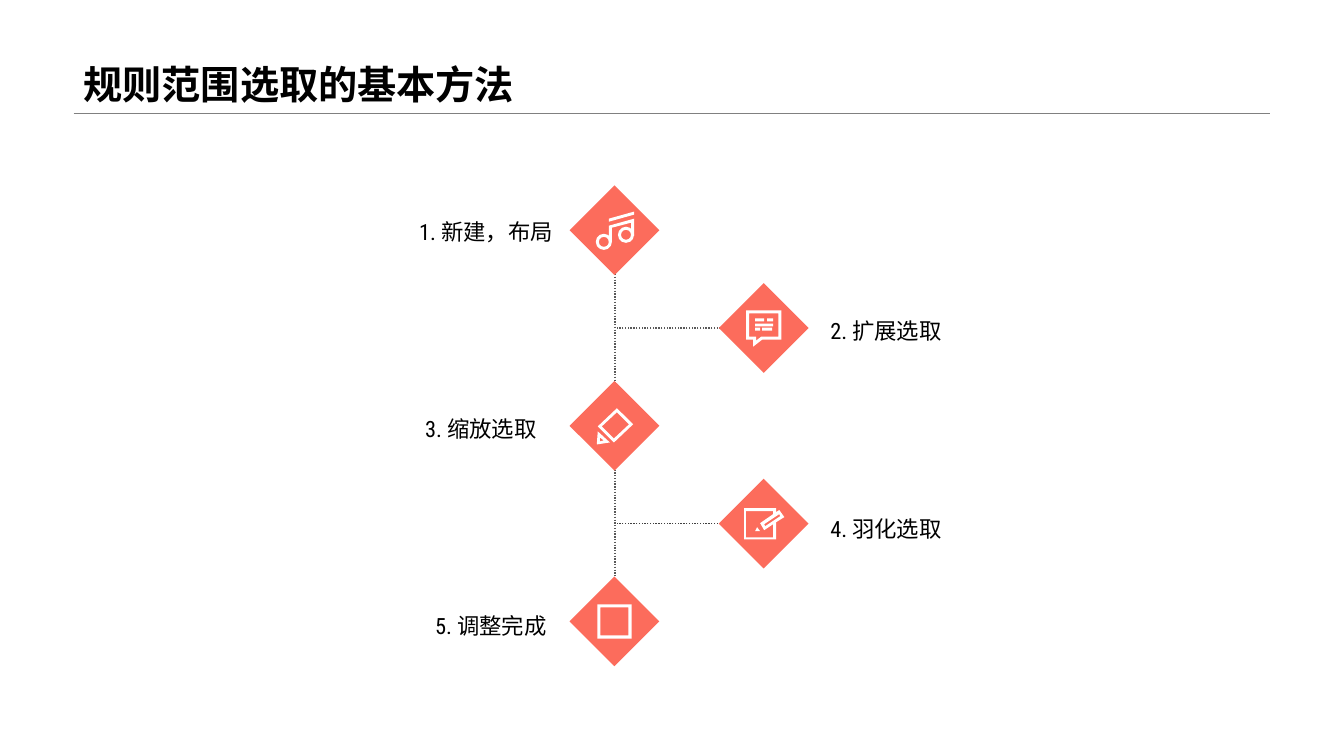
from lxml import etree
from pptx import Presentation
from pptx import util as u
from pptx.dml.color import RGBColor
from pptx.enum import dml, shapes, text
from pptx.oxml import ns

Pt = u.Pt
COLORS = {"coral": "FC6C5C", "white": "FFFFFF", "black": "000000",
          "rule": "808080", "branch": "595959", "dark_branch": "404040"}
UNIT = 0.72  # icon grid step in points
SIDE = 45.36
SPINE_X, BRANCH_X = 438.9, 545.5
STEP_Y = [164.5 + 69.85 * i for i in range(5)]

presentation = Presentation()
presentation.slide_width, presentation.slide_height = Pt(960), Pt(540)
slide = presentation.slides.add_slide(presentation.slide_layouts[6])


def paint(shape, color):
    shape.shadow.inherit = False
    shape.fill.solid()
    shape.fill.fore_color.rgb = RGBColor.from_string(COLORS[color])
    shape.line.fill.background()


def write(content, left, top, width, height, size, font, spacing):
    """Add a text box and return its text frame and run font."""
    frame = slide.shapes.add_textbox(Pt(left), Pt(top), Pt(width), Pt(height)).text_frame
    frame.word_wrap = True
    frame.text = content
    paragraph = frame.paragraphs[0]
    paragraph.line_spacing = spacing
    run_font = paragraph.runs[0].font
    run_font.size, run_font.name = Pt(size), font
    run_font.color.rgb = RGBColor.from_string(COLORS["black"])
    return frame, run_font


# Title
title_frame, title_font = write("规则范围选取的基本方法", 52.6, 0, 854.6, 80.6, 28, "Arial", 0.9)
title_frame.vertical_anchor = text.MSO_ANCHOR.BOTTOM
title_font.bold = True

# Title rule, spine and branches: x1, y1, x2, y2, color, width
lines = [(52.6, 80.9, 907.2, 80.9, "rule", 0.25)]
for upper in (0, 2):
    lines.append((439.4, STEP_Y[upper] + 29.2, 439.4, STEP_Y[upper + 2] - 29.9, "branch", 1))
for step, color in ((1, "branch"), (3, "dark_branch")):
    lines.append((514.8, STEP_Y[step], 439.4, STEP_Y[step], color, 1))
for x1, y1, x2, y2, color, width in lines:
    line = slide.shapes.add_connector(shapes.MSO_CONNECTOR.STRAIGHT, Pt(x1), Pt(y1), Pt(x2), Pt(y2))
    line.line.color.rgb = RGBColor.from_string(COLORS[color])
    line.line.width = Pt(width)
    if color != "rule":
        line.line.dash_style = dml.MSO_LINE.ROUND_DOT
    etree.SubElement(line._element.spPr, ns.qn("a:effectLst"))

# Icons, in grid units from the diamond centre.
# Outlines are lists of contours; presets are (kind, x, y, width, height, adjustment).
RECT, DONUT, FRAME = (shapes.MSO_SHAPE.RECTANGLE, shapes.MSO_SHAPE.DONUT, shapes.MSO_SHAPE.FRAME)
music = {
    "outlines": [
        [[(-5.5, 11.5), (-5.5, -4.5), (19.5, -11.5), (19.5, 5.5), (16.5, 5.5),
          (16.5, -7.5), (-2.5, -2.5), (-2.5, 11.5)]],
        [[(-5.5, -11.5), (-5.5, -8.5), (19.5, -15.5), (19.5, -18.5)]],
    ],
    "presets": [(DONUT, x, y, 16, 16, 0.19) for x, y in ((-18.5, 3.5), (3.5, -3.5))],
}
speech = {
    "outlines": [[
        [(-17.5, -17.5), (-17.5, 11.5), (-10.5, 11.5), (-10.5, 18.5), (-1.5, 11.5),
         (17.5, 11.5), (17.5, -17.5)],
        [(14.5, 8.5), (-2.5, 8.5), (-7.5, 12.5), (-7.5, 8.5), (-14.5, 8.5),
         (-14.5, -14.5), (14.5, -14.5)],
    ]],
    "presets": [(RECT, x, y, width, 3, None) for x, y, width in (
        (-8.5, -4.5, 18), (-8.5, -0.5, 5), (-1.5, -0.5, 10), (-8.5, -9.5, 9), (3.5, -9.5, 6))],
}
pencil = {
    "outlines": [
        [[(2.5, -17.5), (-16.5, 0.5), (-0.5, 16.5), (18.5, -1.5)],
         [(-12.5, 0.5), (2.5, -13.5), (14.5, -1.5), (-0.5, 12.5)]],
        [[(-17.5, 18.5), (-4.5, 16.5), (-16.5, 5.5)],
         [(-14.5, 11.5), (-10.5, 14.5), (-14.5, 15.5)]],
    ],
    "presets": [],
}
edit = {
    "outlines": [
        [[(20.5, -6.5), (15.5, -13.5), (12.5, -11.5), (12.5, -15.5), (-19.5, -15.5),
          (-19.5, 15.5), (12.5, 15.5), (12.5, -1.5)],
         [(16.5, -7.5), (1.5, 2.5), (0.5, 0.5), (15.5, -9.5)],
         [(9.5, 13.5), (-17.5, 13.5), (-17.5, -12.5), (9.5, -12.5), (9.5, -9.5),
          (-3.5, -0.5), (0.5, 6.5), (9.5, 0.5)]],
        [[(-6.5, 3.5), (-8.5, 7.5), (-3.5, 7.5)]],
    ],
    "presets": [],
}
finish = {"outlines": [], "presets": [(FRAME, -17, -17, 34, 34, 0.09)]}

# Steps: label, label left, top and width, diamond centre, icon
steps = [
    ("1. 新建，布局", 292.3, 146.2, 121, SPINE_X, music),
    ("2. 扩展选取", 586, 217.4, 319, BRANCH_X, speech),
    ("3. 缩放选取", 296.6, 287.3, 131, SPINE_X, pencil),
    ("4. 羽化选取", 586, 358.6, 319, BRANCH_X, edit),
    ("5. 调整完成", 303.8, 427.7, 141.8, SPINE_X, finish),
]
for (label, left, top, width, center_x, icon), center_y in zip(steps, STEP_Y):
    diamond = slide.shapes.add_shape(
        RECT, Pt(center_x - SIDE / 2), Pt(center_y - SIDE / 2), Pt(SIDE), Pt(SIDE))
    diamond.rotation = 45
    paint(diamond, "coral")

    for contours in icon["outlines"]:
        # Freeform points are whole numbers, so the grid is split in tenths
        contours = [[(x * 10, y * 10) for x, y in contour] for contour in contours]
        builder = slide.shapes.build_freeform(*contours[0][0], scale=Pt(UNIT) / 10)
        builder.add_line_segments(contours[0][1:], close=True)
        for hole in contours[1:]:
            builder.move_to(*hole[0])
            builder.add_line_segments(hole[1:], close=True)
        paint(builder.convert_to_shape(Pt(center_x), Pt(center_y)), "white")

    for kind, x, y, part_width, part_height, adjustment in icon["presets"]:
        part = slide.shapes.add_shape(
            kind, Pt(center_x + x * UNIT), Pt(center_y + y * UNIT),
            Pt(part_width * UNIT), Pt(part_height * UNIT))
        if adjustment is not None:
            part.adjustments[0] = adjustment
        paint(part, "white")

    write(label, left, top, width, 32.4, 16, "Roboto Condensed", 1.3)

presentation.save("out.pptx")
